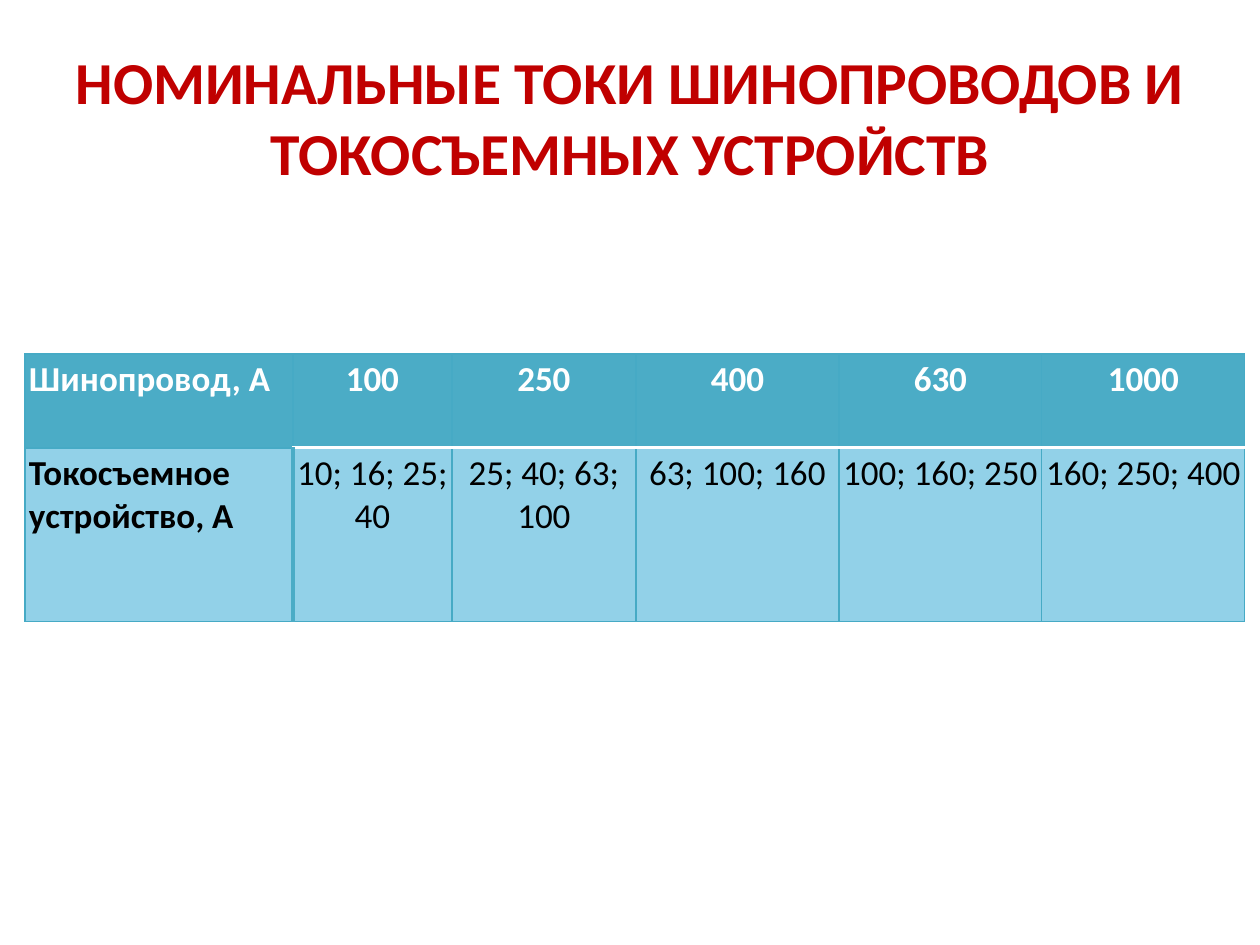
from lxml import etree
from pptx import Presentation
from pptx.dml import color
from pptx.enum import text
from pptx.oxml import ns
from pptx.util import Pt

RED = color.RGBColor(0xC0, 0x00, 0x00)
WHITE = color.RGBColor(0xFF, 0xFF, 0xFF)
BLACK = color.RGBColor(0x00, 0x00, 0x00)
TEAL = color.RGBColor(0x4B, 0xAC, 0xC6)
EDGE = color.RGBColor(0x46, 0xAA, 0xC5)
PALE = color.RGBColor(0x92, 0xD1, 0xE8)

SCALE = 914400 / 126
ALIGN = text.PP_ALIGN

TITLE = "НОМИНАЛЬНЫЕ ТОКИ ШИНОПРОВОДОВ И ТОКОСЪЕМНЫХ УСТРОЙСТВ"
ROWS = [
    ["Шинопровод, А", "100", "250", "400", "630", "1000"],
    ["Токосъемное устройство, А", "10; 16; 25; 40", "25; 40; 63; 100",
     "63; 100; 160", "100; 160; 250", "160; 250; 400"],
]
WIDTHS = [268, 159, 184, 203, 203, 203]
HEIGHTS = [94, 174]


def px(count):
    return round(count * SCALE)


def assign(item, values):
    for name, value in values.items():
        setattr(item, name, value)


class Page:
    font = "Calibri"
    inset = 4

    def __init__(self, deck):
        self.slide = deck.slides.add_slide(deck.slide_layouts[5])

    def label(self, frame, words, align, size, tint, bold):
        para = frame.paragraphs[0]
        para.alignment = align
        run = para.add_run()
        run.text = words
        assign(run.font, {"name": self.font, "size": Pt(size), "bold": bold})
        run.font.color.rgb = tint

    def title(self, words, left, top, width, height):
        shape = self.slide.shapes.title
        assign(shape, {"left": px(left), "top": px(top),
                       "width": px(width), "height": px(height)})
        frame = shape.text_frame
        assign(frame, {"word_wrap": True, "auto_size": text.MSO_AUTO_SIZE.NONE,
                       "vertical_anchor": text.MSO_ANCHOR.MIDDLE})
        self.label(frame, words, ALIGN.CENTER, 34, RED, True)

    def border(self, cell, side, tint, width):
        props = cell._tc.get_or_add_tcPr()
        line = etree.SubElement(props, ns.qn(f"a:ln{side}"), w=str(Pt(width)))
        fill = etree.SubElement(line, ns.qn("a:solidFill"))
        etree.SubElement(fill, ns.qn("a:srgbClr"), val=str(tint))

    def cell(self, cell, words, row, col):
        head, first = row == 0, col == 0
        assign(cell, {f"margin_{side}": px(self.inset)
                      for side in ("left", "right", "top", "bottom")})
        sides = dict.fromkeys("LRTB", (EDGE, 0.75))
        if not first:
            sides["B" if head else "T"] = (WHITE, 2)
        if not head and col < 2:
            sides["R" if first else "L"] = (TEAL, 2)
        for side, style in sides.items():
            self.border(cell, side, *style)
        cell.fill.solid()
        cell.fill.fore_color.rgb = TEAL if head else PALE
        self.label(cell.text_frame, words,
                   ALIGN.JUSTIFY if first else ALIGN.CENTER,
                   20, WHITE if head else BLACK, head or first)

    def table(self, rows, left, top, widths, heights):
        frame = self.slide.shapes.add_table(
            len(rows), len(widths), px(left), px(top),
            px(sum(widths)), px(sum(heights)))
        grid = frame.table
        for col, width in zip(grid.columns, widths):
            col.width = px(width)
        for row, height in zip(grid.rows, heights):
            row.height = px(height)
        for row, line in enumerate(rows):
            for col, words in enumerate(line):
                self.cell(grid.cell(row, col), words, row, col)


def main():
    deck = Presentation()
    assign(deck, {"slide_width": px(1260), "slide_height": px(945)})
    page = Page(deck)
    page.title(TITLE, 63, 38, 1134, 157)
    page.table(ROWS, 25, 354, WIDTHS, HEIGHTS)
    deck.save("out.pptx")


if __name__ == "__main__":
    main()
